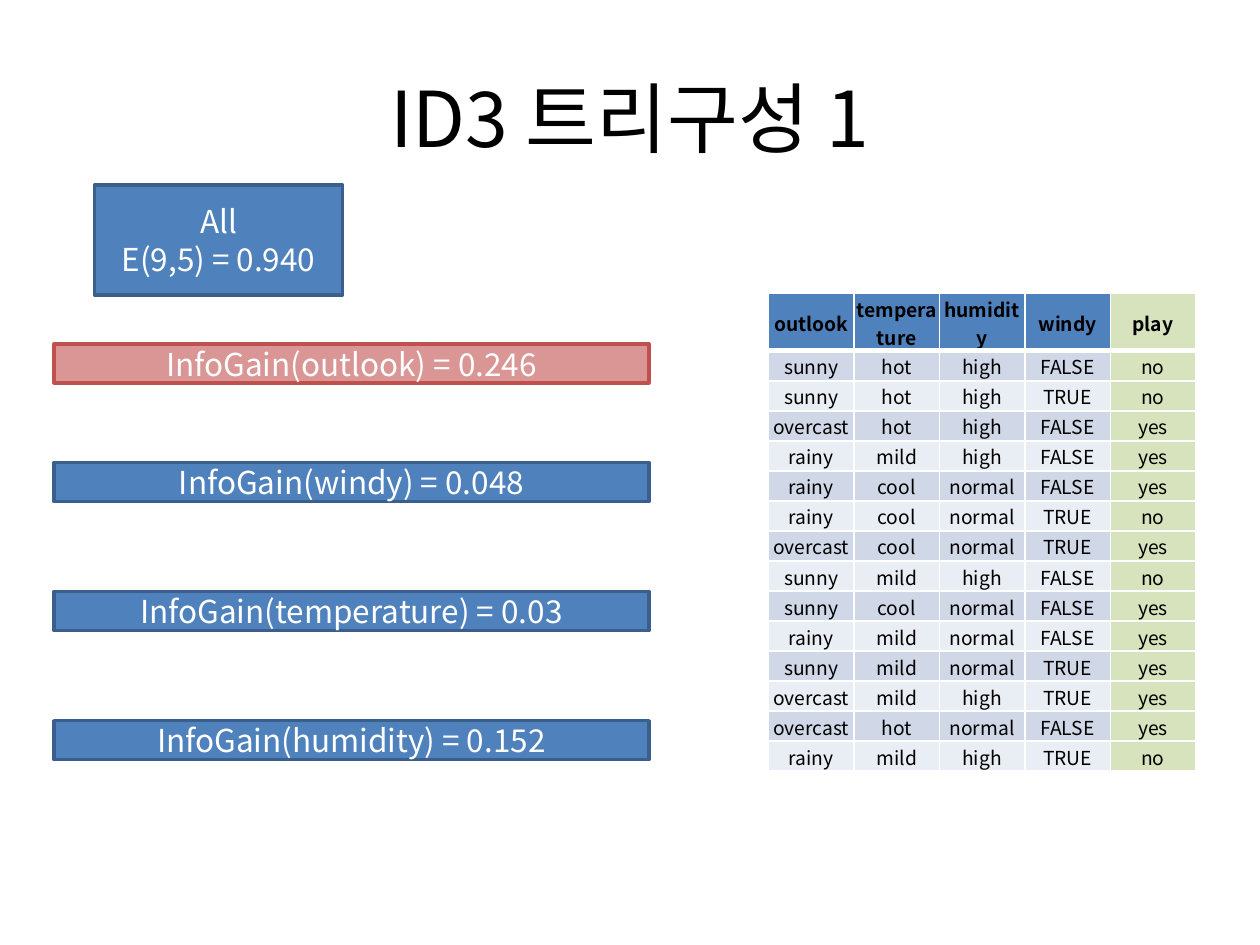
from dataclasses import dataclass

from lxml import etree
from pptx import Presentation
from pptx import util as u
from pptx.dml.color import RGBColor
from pptx.enum import shapes, text
from pptx.oxml.ns import qn

FONT = "Noto Sans CJK KR"
WHITE = RGBColor(0xFF, 0xFF, 0xFF)
BLACK = RGBColor(0x00, 0x00, 0x00)
BLUE = RGBColor(0x4F, 0x81, 0xBD)
BLUE_EDGE = RGBColor(0x3A, 0x5F, 0x8C)
ROSE = RGBColor(0xD9, 0x96, 0x94)
RED_EDGE = RGBColor(0xC0, 0x50, 0x4D)
GREEN = RGBColor(0x9B, 0xBB, 0x59)
BANDS = RGBColor(0xD0, 0xD8, 0xE8), RGBColor(0xE9, 0xED, 0xF4)

WIDTH, HEIGHT = u.Inches(10), u.Inches(7.5)
GREEN_OPACITY = 40  # percent

HEADER = "outlook temperature humidity windy play".split()
WEATHER = [line.split() for line in """\
sunny hot high FALSE no
sunny hot high TRUE no
overcast hot high FALSE yes
rainy mild high FALSE yes
rainy cool normal FALSE yes
rainy cool normal TRUE no
overcast cool normal TRUE yes
sunny mild high FALSE no
sunny cool normal FALSE yes
rainy mild normal FALSE yes
sunny mild normal TRUE yes
overcast mild high TRUE yes
overcast hot normal FALSE yes
rainy mild high TRUE no""".splitlines()]


@dataclass(frozen=True)
class Area:
    """A rectangle in percent of the slide's width and height."""
    left: float
    top: float
    width: float
    height: float

    def emu(self) -> dict[str, int]:
        return {"left": across(self.left), "top": down(self.top),
                "width": across(self.width), "height": down(self.height)}


@dataclass(frozen=True)
class Node:
    label: str
    area: Area
    fill: RGBColor = BLUE
    edge: RGBColor = BLUE_EDGE


def across(percent: float) -> int:
    return round(WIDTH * percent / 100)


def down(percent: float) -> int:
    return round(HEIGHT * percent / 100)


TITLE_AREA = Area(5, 4, 90, 16.67)
TABLE_AREA = Area(61, 31.07, 33.9, 50.4)
HEADER_HEIGHT = 5.87
GAIN_PITCH = 13.67


def gain_area(top: float) -> Area:
    return Area(4.3, top, 47.2, 4.13)


NODES = [
    Node("All\nE(9,5) = 0.940", Area(7.5, 19.6, 19.7, 11.6)),
    Node("InfoGain(outlook) = 0.246", gain_area(36.4), ROSE, RED_EDGE),
] + [
    Node(f"InfoGain({attribute}) = {gain}", gain_area(48.93 + i * GAIN_PITCH))
    for i, (attribute, gain) in enumerate(
        [("windy", "0.048"), ("temperature", "0.03"), ("humidity", "0.152")])
]


def write(frame, wording: str, size: float, color: RGBColor, bold: bool = False) -> None:
    frame.text = wording
    for paragraph in frame.paragraphs:
        paragraph.alignment = text.PP_ALIGN.CENTER
        for run in paragraph.runs:
            formats = {"name": FONT, "size": u.Pt(size), "bold": bold}
            for attribute, value in formats.items():
                setattr(run.font, attribute, value)
            run.font.color.rgb = color
            east_asian = etree.Element(qn("a:ea"), typeface=FONT)
            run.font._element.find(qn("a:latin")).addnext(east_asian)


def draw_node(slide, node: Node) -> None:
    box = slide.shapes.add_shape(shapes.MSO_SHAPE.RECTANGLE, **node.area.emu())
    box.shadow.inherit = False
    box.fill.solid()
    box.fill.fore_color.rgb = node.fill
    box.line.color.rgb = node.edge
    box.line.width = u.Pt(2)
    box.text_frame.vertical_anchor = text.MSO_ANCHOR.MIDDLE
    write(box.text_frame, node.label, 18, WHITE)


def add_borders(cell, row: int) -> None:
    """White rules, with a heavy one between the header and the body."""
    points = {"L": 1, "R": 1, "T": 3 if row == 1 else 1, "B": 3 if row == 0 else 1}
    properties = cell._tc.get_or_add_tcPr()
    for side, width in points.items():
        line = etree.SubElement(properties, qn(f"a:ln{side}"), w=str(u.Pt(width)))
        fill = etree.SubElement(line, qn("a:solidFill"))
        etree.SubElement(fill, qn("a:srgbClr"), val=str(WHITE))


def fill_cell(cell, color: RGBColor, opacity: int = 100) -> None:
    cell.fill.solid()
    cell.fill.fore_color.rgb = color
    if opacity < 100:
        solid = cell._tc.tcPr.find(qn("a:solidFill"))
        etree.SubElement(solid[0], qn("a:alpha"), val=str(opacity * 1000))


def draw_table(slide, area: Area) -> None:
    rows = [HEADER, *WEATHER]
    table = slide.shapes.add_table(len(rows), len(HEADER), **area.emu()).table
    for column in table.columns:
        column.width = across(area.width / len(HEADER))
    body_height = (area.height - HEADER_HEIGHT) / len(WEATHER)
    margins = {"margin_left": 0.01, "margin_right": 0.01,
               "margin_top": 0.01, "margin_bottom": 0}
    for r, values in enumerate(rows):
        table.rows[r].height = down(body_height if r else HEADER_HEIGHT)
        for c, value in enumerate(values):
            cell = table.cell(r, c)
            for attribute, inches in margins.items():
                setattr(cell, attribute, u.Inches(inches))
            cell.vertical_anchor = text.MSO_ANCHOR.MIDDLE
            add_borders(cell, r)
            if HEADER[c] == "play":
                fill_cell(cell, GREEN, GREEN_OPACITY)
            else:
                fill_cell(cell, BANDS[(r - 1) % 2] if r else BLUE)
            write(cell.text_frame, value, 11, BLACK, bold=r == 0)


def main() -> None:
    deck = Presentation()
    deck.slide_width, deck.slide_height = WIDTH, HEIGHT
    slide = deck.slides.add_slide(deck.slide_layouts.get_by_name("Title Only"))
    title = slide.shapes.title
    for attribute, length in TITLE_AREA.emu().items():
        setattr(title, attribute, length)
    title.text_frame.vertical_anchor = text.MSO_ANCHOR.MIDDLE
    write(title.text_frame, "ID3 트리구성 1", 44, BLACK)
    for node in NODES:
        draw_node(slide, node)
    draw_table(slide, TABLE_AREA)
    deck.save("out.pptx")


if __name__ == "__main__":
    main()
